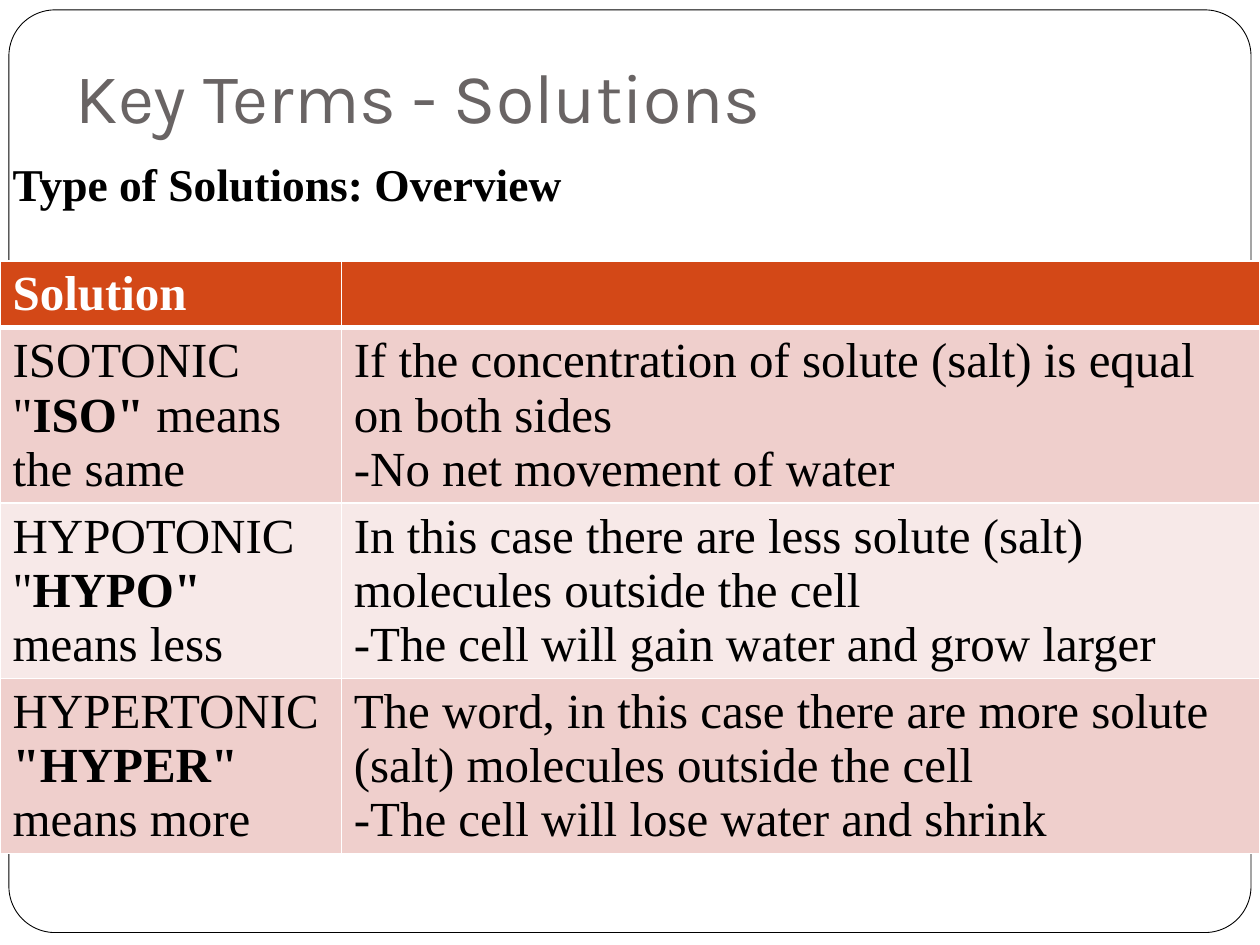
from dataclasses import dataclass

from lxml import etree
from pptx import Presentation
from pptx.dml.color import RGBColor
from pptx.enum.shapes import MSO_SHAPE
from pptx.enum.text import MSO_ANCHOR, PP_ALIGN
from pptx.oxml.ns import qn
from pptx.util import Cm, Pt

ROUNDED = MSO_SHAPE.ROUNDED_RECTANGLE
BOTTOM, TOP = MSO_ANCHOR.BOTTOM, MSO_ANCHOR.TOP
LEFT = PP_ALIGN.LEFT


@dataclass(frozen=True)
class Theme:
    """Colours, fonts and type sizes of the slide."""
    title_font: str = "Karla"
    body_font: str = "Times New Roman"
    title_size: int = 40
    body_size: int = 26
    table_size: int = 28
    title: str = "696464"
    text: str = "000000"
    paper: str = "FFFFFF"
    header: str = "D34817"
    bands: tuple = ("EFCFCC", "F7E9E8")


THEME = Theme()

ROWS = [
    ([["ISOTONIC"], ['"', '*ISO"', " means the same"]],
     [["If the concentration of solute (salt) is equal on both sides"],
      ["-No net movement of water"]]),
    ([["HYPOTONIC"], ['"', '*HYPO"', " means less"]],
     [["In this case there are less solute (salt) molecules outside the cell"],
      ["-The cell will gain water and grow larger"]]),
    ([["HYPERTONIC"], ['*"HYPER"', " means more"]],
     [["The word, in this case there are more solute (salt) molecules outside the cell"],
      ["-The cell will lose water and shrink"]]),
]


def style_run(r, font, size, color, bold=False):
    """Set the font of one run."""
    r.font.name = font
    r.font.size = Pt(size)
    r.font.bold = bold
    r.font.color.rgb = RGBColor.from_string(color)


def place(sp, box):
    """Move a shape to a box of left, top, width and height in centimetres."""
    sp.left, sp.top, sp.width, sp.height = (Cm(v) for v in box)


def add_frame(slide, box):
    """Draw the rounded page frame behind the placeholders."""
    sp = slide.shapes.add_shape(ROUNDED, *(Cm(v) for v in box))
    sp.adjustments[0] = 0.05
    sp.shadow.inherit = False
    sp.fill.solid()
    sp.fill.fore_color.rgb = RGBColor.from_string(THEME.paper)
    sp.line.color.rgb = RGBColor.from_string(THEME.text)
    sp.line.width = Pt(0.5)
    slide.shapes._spTree.insert(2, sp._element)


def fill_title(slide, box, text):
    """Place and format the slide title."""
    sp = slide.shapes.title
    place(sp, box)
    tf = sp.text_frame
    tf.text = text
    tf.vertical_anchor = BOTTOM
    tf.margin_bottom = Cm(0.25)
    p = tf.paragraphs[0]
    p.alignment = LEFT
    style_run(p.runs[0], THEME.title_font, THEME.title_size, THEME.title)


def fill_body(slide, box, text):
    """Place the body heading without a bullet."""
    sp = slide.placeholders[1]
    place(sp, box)
    tf = sp.text_frame
    tf.text = text
    tf.vertical_anchor = TOP
    p = tf.paragraphs[0]
    p.space_before = Pt(5.8)
    pPr = p._p.get_or_add_pPr()
    pPr.set("marL", str(Cm(0.76)))
    pPr.set("indent", str(-Cm(0.76)))
    etree.SubElement(pPr, qn("a:buNone"))
    style_run(p.runs[0], THEME.body_font, THEME.body_size, THEME.text, True)


def style_cell(cell, fill, bottom=1):
    """Give a cell white borders and a solid fill."""
    tcPr = cell._tc.get_or_add_tcPr()
    for side, width in (("L", 1), ("R", 1), ("T", 1), ("B", bottom)):
        ln = etree.SubElement(tcPr, qn(f"a:ln{side}"), w=str(Pt(width)))
        solid = etree.SubElement(ln, qn("a:solidFill"))
        etree.SubElement(solid, qn("a:srgbClr"), val=THEME.paper)
    cell.fill.solid()
    cell.fill.fore_color.rgb = RGBColor.from_string(fill)


def write_cell(cell, paragraphs, color, bold=False):
    """Write paragraphs of runs; a leading asterisk marks a bold run."""
    tf = cell.text_frame
    for i, parts in enumerate(paragraphs):
        p = tf.paragraphs[0] if i == 0 else tf.add_paragraph()
        for part in parts:
            r = p.add_run()
            r.text = part.removeprefix("*")
            style_run(r, THEME.body_font, THEME.table_size, color,
                      bold or part.startswith("*"))


def add_terms_table(slide, box, header, rows):
    """Build the two-column table of solution types."""
    left, top, width, height = box
    first_col, header_height = 6.88, 1.33
    table = slide.shapes.add_table(
        len(rows) + 1, 2, Cm(left), Cm(top), Cm(width), Cm(height)).table
    table.columns[0].width = Cm(first_col)
    table.columns[1].width = Cm(width - first_col)
    table.rows[0].height = Cm(header_height)
    for cell in table.rows[0].cells:
        style_cell(cell, THEME.header, bottom=3)
    write_cell(table.cell(0, 0), [[header]], THEME.paper, True)
    for i, row in enumerate(rows, 1):
        table.rows[i].height = Cm((height - header_height) / len(rows))
        for cell, paragraphs in zip(table.rows[i].cells, row):
            style_cell(cell, THEME.bands[(i - 1) % 2])
            write_cell(cell, paragraphs, THEME.text)


def main():
    """Build and save the slide."""
    prs = Presentation()
    prs.slide_width, prs.slide_height = Cm(25.4), Cm(19.05)
    slide = prs.slides.add_slide(prs.slide_layouts[1])
    add_frame(slide, (0.18, 0.2, 25.04, 18.6))
    fill_title(slide, (1.27, -0.15, 22.86, 3.18), "Key Terms - Solutions")
    fill_body(slide, (0, 3.02, 25.4, 14), "Type of Solutions: Overview")
    add_terms_table(slide, (0, 5.26, 25.4, 11.92), "Solution", ROWS)
    prs.save("out.pptx")


if __name__ == "__main__":
    main()
